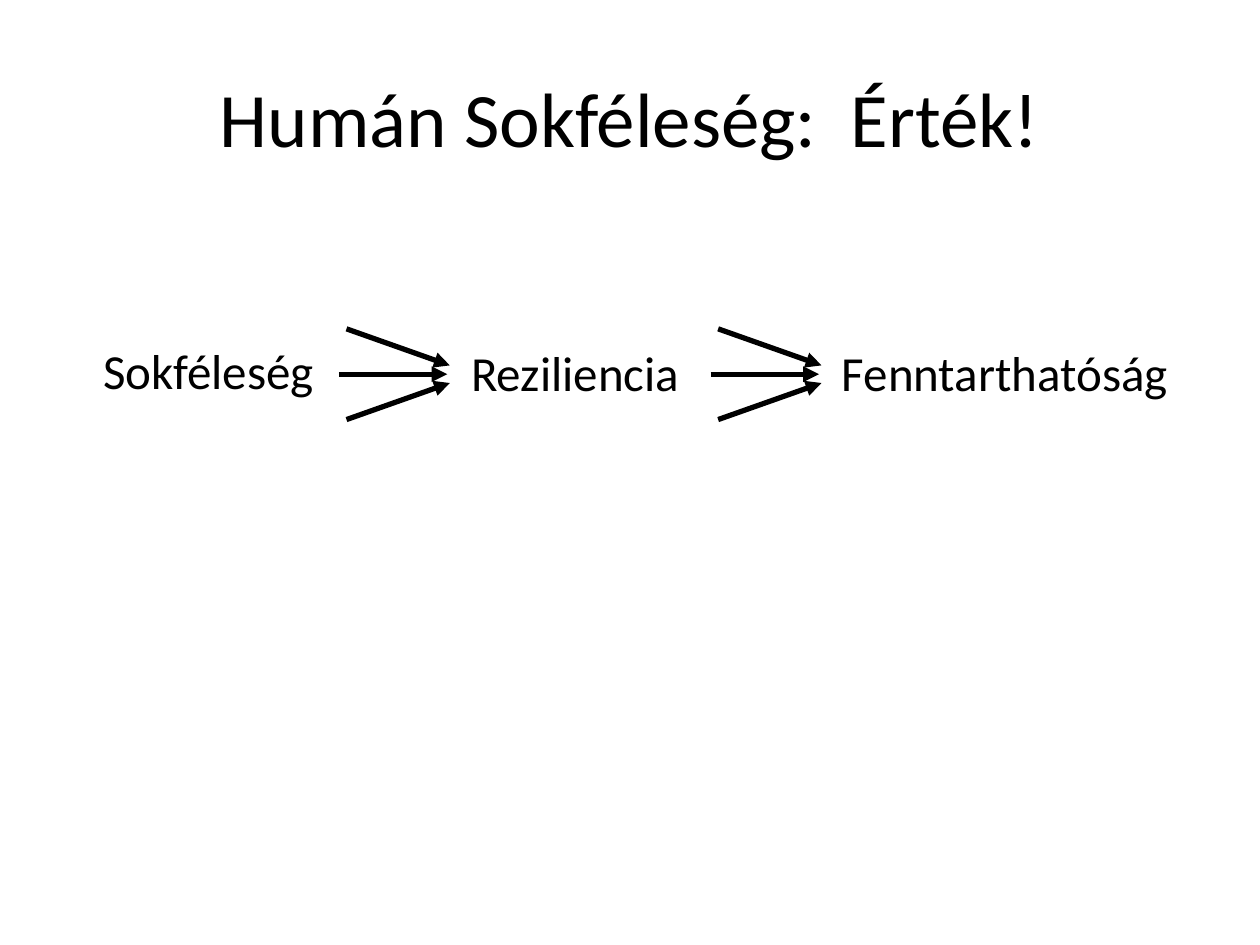
"""Builds a slide on human diversity with a three-step arrow chain."""
from lxml import etree
from pptx import Presentation
from pptx import util as u
from pptx.dml.color import RGBColor
from pptx.enum import shapes, text
from pptx.oxml.ns import qn

BLACK = RGBColor(0, 0, 0)
WHITE = RGBColor(255, 255, 255)


def write(frame, words, size=28, font="Calibri", color=BLACK,
          align=text.PP_ALIGN.CENTER, anchor=text.MSO_ANCHOR.TOP):
    frame.word_wrap = True
    frame.vertical_anchor = anchor
    para = frame.paragraphs[0]
    para.alignment = align
    span = para.add_run()
    span.text = words
    span.font.size = u.Pt(size)
    span.font.name = font
    span.font.color.rgb = color


class Page:
    line_width = u.Pt(3)
    label_height = 0.57

    def __init__(self, deck):
        self.slide = deck.slides.add_slide(deck.slide_layouts[5])
        self.slide.background.fill.solid()
        self.slide.background.fill.fore_color.rgb = WHITE

    def title(self, words, left, top, width, height):
        box = self.slide.shapes.title
        box.left, box.top = u.Inches(left), u.Inches(top)
        box.width, box.height = u.Inches(width), u.Inches(height)
        write(box.text_frame, words, size=44, anchor=text.MSO_ANCHOR.MIDDLE)

    def label(self, words, left, top, width):
        box = self.slide.shapes.add_textbox(
            u.Inches(left), u.Inches(top), u.Inches(width), u.Inches(self.label_height))
        write(box.text_frame, words)
        box.text_frame.auto_size = text.MSO_AUTO_SIZE.SHAPE_TO_FIT_TEXT

    def arrow(self, group, x1, y1, x2, y2):
        arrow = group.shapes.add_connector(
            shapes.MSO_CONNECTOR.STRAIGHT,
            u.Inches(x1), u.Inches(y1), u.Inches(x2), u.Inches(y2))
        arrow.line.color.rgb = BLACK
        arrow.line.width = self.line_width
        etree.SubElement(arrow.line._get_or_add_ln(), qn("a:tailEnd"), type="triangle")
        etree.SubElement(arrow._element.spPr, qn("a:effectLst"))

    def converging_arrows(self, left, middle=2.97):
        group = self.slide.shapes.add_group_shape()
        self.arrow(group, left, middle, left + 0.86, middle)
        for side in (1, -1):
            self.arrow(group, left + 0.06, middle + side * 0.36,
                       left + 0.88, middle + side * 0.07)


def main():
    deck = Presentation()
    deck.slide_width, deck.slide_height = u.Inches(10), u.Inches(7.5)
    page = Page(deck)
    page.title("Humán Sokféleség:  Érték!", 0.5, 0.3, 9, 1.25)
    page.converging_arrows(2.69)
    page.label("Sokféleség", 0.54, 2.65, 2.23)
    page.label("Fenntarthatóság", 6.47, 2.67, 3.01)
    page.label("Reziliencia", 3.45, 2.67, 2.23)
    page.converging_arrows(5.64)
    deck.save("out.pptx")


if __name__ == "__main__":
    main()
